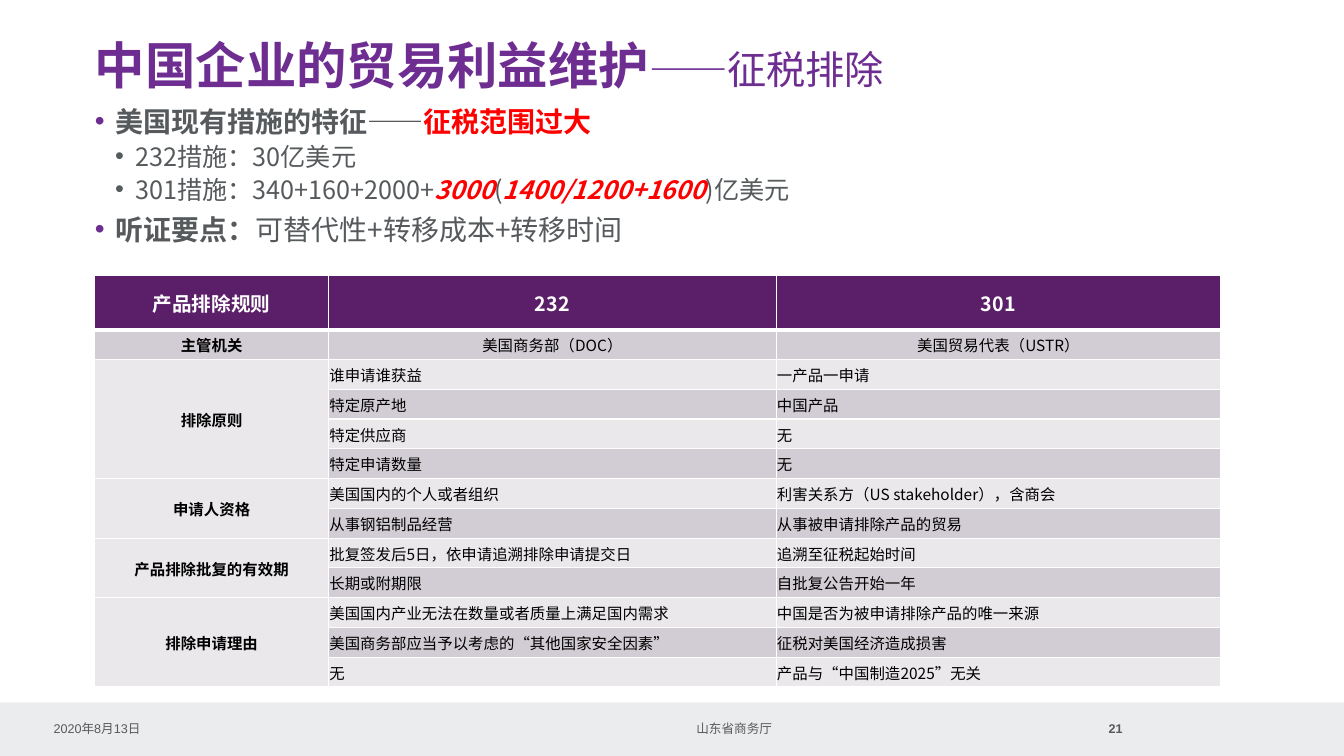
import pptx
import pptx.util
import pptx.dml.color
import pptx.enum.shapes
import pptx.enum.text
import pptx.oxml.ns
from lxml import etree

Cm, Pt = pptx.util.Cm, pptx.util.Pt
RGBColor = pptx.dml.color.RGBColor
PP_ALIGN = pptx.enum.text.PP_ALIGN
MSO_ANCHOR = pptx.enum.text.MSO_ANCHOR
qn = pptx.oxml.ns.qn

PURPLE = RGBColor(0x6E, 0x2D, 0x91)
HEADER_PURPLE = RGBColor(0x5B, 0x1F, 0x69)
GREY = RGBColor(0x56, 0x5A, 0x5C)
FOOTER_GREY = RGBColor(0xEB, 0xEC, 0xED)
BAND_DARK = RGBColor(0xD2, 0xCD, 0xD4)
BAND_LIGHT = RGBColor(0xEA, 0xE8, 0xEB)
RED = RGBColor(0xFF, 0x00, 0x00)
WHITE = RGBColor(0xFF, 0xFF, 0xFF)
BLACK = RGBColor(0x00, 0x00, 0x00)

CJK = "Noto Sans CJK SC"
LEFT = 2.39

# Wording: each point is (level, [(text, format), ...])
HOT = dict(color=RED, bold=True, italic=True)
POINTS = [
    (0, [("美国现有措施的特征——", dict(bold=True)),
         ("征税范围过大", dict(bold=True, color=RED))]),
    (1, [("232措施：30亿美元", {})]),
    (1, [("301措施：340+160+2000+", {}), ("3000", HOT), ("(", {}),
         ("1400/1200+1600", HOT), (")亿美元", {})]),
    (0, [("听证要点：", dict(bold=True)),
         ("可替代性+转移成本+转移时间", {})]),
]
HEADINGS = ["产品排除规则", "232", "301"]
RULES = [
    ("主管机关", [("美国商务部（DOC）", "美国贸易代表（USTR）")]),
    ("排除原则", [("谁申请谁获益", "一产品一申请"),
              ("特定原产地", "中国产品"),
              ("特定供应商", "无"),
              ("特定申请数量", "无")]),
    ("申请人资格", [("美国国内的个人或者组织", "利害关系方（US stakeholder），含商会"),
               ("从事钢铝制品经营", "从事被申请排除产品的贸易")]),
    ("产品排除批复的有效期", [("批复签发后5日，依申请追溯排除申请提交日", "追溯至征税起始时间"),
                    ("长期或附期限", "自批复公告开始一年")]),
    ("排除申请理由", [("美国国内产业无法在数量或者质量上满足国内需求", "中国是否为被申请排除产品的唯一来源"),
                ("美国商务部应当予以考虑的“其他国家安全因素”", "征税对美国经济造成损害"),
                ("无", "产品与“中国制造2025”无关")]),
]


def add_text(paragraph, text, size=18, color=GREY, bold=False, italic=False, font=CJK):
    run = paragraph.add_run()
    run.text = text
    run.font.size = Pt(size)
    run.font.bold = bold
    run.font.italic = italic
    run.font.color.rgb = color
    run.font.name = font
    east_asian = etree.Element(qn("a:ea"), typeface=CJK)
    run.font._element.find(qn("a:latin")).addnext(east_asian)


class RulesSlide:
    def __init__(self, deck):
        self.slide = deck.slides.add_slide(deck.slide_layouts[5])
        self.shapes = self.slide.shapes

    def clear_frame(self, frame, anchor, wrap=True):
        frame.margin_left = frame.margin_right = 0
        frame.margin_top = frame.margin_bottom = 0
        frame.auto_size = pptx.enum.text.MSO_AUTO_SIZE.NONE
        frame.vertical_anchor = anchor
        frame.word_wrap = wrap
        return frame.paragraphs[0]

    def title(self, main, detail):
        heading = self.shapes.title
        heading.left, heading.top = Cm(LEFT), Cm(1.02)
        heading.width, heading.height = Cm(26.52), Cm(1.47)
        line = self.clear_frame(heading.text_frame, MSO_ANCHOR.TOP)
        line.alignment = PP_ALIGN.LEFT
        line.line_spacing = 0.9
        add_text(line, main, size=36, color=PURPLE, bold=True)
        add_text(line, detail, size=28, color=PURPLE)

    def band(self, left, top, width, height, color):
        strip = self.shapes.add_shape(pptx.enum.shapes.MSO_SHAPE.RECTANGLE,
                                      Cm(left), Cm(top), Cm(width), Cm(height))
        strip.shadow.inherit = False
        strip.fill.solid()
        strip.fill.fore_color.rgb = color
        strip.line.fill.background()

    def footer(self, text, left, width, align=PP_ALIGN.LEFT, wrap=True, bold=False):
        box = self.shapes.add_textbox(Cm(left), Cm(18.16), Cm(width), Cm(0.41))
        line = self.clear_frame(box.text_frame, MSO_ANCHOR.MIDDLE, wrap)
        line.alignment = align
        add_text(line, text, size=9, bold=bold, font="Arial")

    def bullet(self, paragraph, level):
        paragraph.level = level
        props = paragraph._p.get_or_add_pPr()
        props.set("marL", str(Cm(0.51 * (level + 1))))
        props.set("indent", str(-Cm(0.51)))
        bullet_color = etree.SubElement(props, qn("a:buClr"))
        etree.SubElement(bullet_color, qn("a:srgbClr"), val=str(GREY if level else PURPLE))
        etree.SubElement(props, qn("a:buFont"), typeface="Arial")
        etree.SubElement(props, qn("a:buChar"), char="•")

    def points(self, points):
        box = self.shapes.add_textbox(Cm(LEFT), Cm(2.78), Cm(25.58), Cm(4.06))
        line = self.clear_frame(box.text_frame, MSO_ANCHOR.TOP)
        for number, (level, pieces) in enumerate(points):
            if number:
                line = box.text_frame.add_paragraph()
            self.bullet(line, level)
            line.line_spacing = 0.82
            line.space_before = Pt((6 if level else 10) if number else 0)
            for text, style in pieces:
                add_text(line, text, size=18 if level else 20, **style)

    def cell(self, cell, fill, top=1, bottom=1):
        cell.margin_left = cell.margin_right = cell.margin_top = Cm(0.02)
        cell.margin_bottom = 0
        cell.vertical_anchor = MSO_ANCHOR.MIDDLE
        props = cell._tc.get_or_add_tcPr()
        for side, width in (("L", 1), ("R", 1), ("T", top), ("B", bottom)):
            border = etree.SubElement(props, qn(f"a:ln{side}"), w=str(Pt(width)))
            paint = etree.SubElement(border, qn("a:solidFill"))
            etree.SubElement(paint, qn("a:srgbClr"), val=str(WHITE))
        cell.fill.solid()
        cell.fill.fore_color.rgb = fill

    def cell_text(self, cell, text, centred=True, **style):
        line = cell.text_frame.paragraphs[0]
        line.alignment = PP_ALIGN.CENTER if centred else PP_ALIGN.LEFT
        add_text(line, text, **style)

    def rules_table(self, headings, rules):
        row_count = 1 + sum(len(pairs) for _, pairs in rules)
        table = self.shapes.add_table(row_count, 3, Cm(LEFT), Cm(6.94),
                                      Cm(28.37), Cm(10.37)).table
        for column, width in zip(table.columns, (5.89, 11.28, 11.2)):
            column.width = Cm(width)
        for number, row in enumerate(table.rows):
            row.height = Cm(0.75 if number else 1.37)
            fill = (BAND_LIGHT, BAND_DARK)[number % 2] if number else HEADER_PURPLE
            for cell in row.cells:
                self.cell(cell, fill, top=3 if number == 1 else 1,
                          bottom=1 if number else 3)

        # Header row
        for column, text in enumerate(headings):
            self.cell_text(table.cell(0, column), text, size=14, color=WHITE, bold=True)

        # Groups of rules, with the topic merged down its rows
        first = 1
        for topic, pairs in rules:
            last = first + len(pairs) - 1
            if last > first:
                table.cell(first, 0).merge(table.cell(last, 0))
            self.cell_text(table.cell(first, 0), topic, size=11, color=BLACK, bold=True)
            for row, pair in enumerate(pairs, first):
                for column, text in enumerate(pair, 1):
                    self.cell_text(table.cell(row, column), text, centred=row == 1,
                                   size=11, color=BLACK)
            first = last + 1


def main():
    deck = pptx.Presentation()
    deck.slide_width, deck.slide_height = Cm(33.87), Cm(19.05)
    page = RulesSlide(deck)

    # Footer
    page.band(0, 17.7, 33.87, 1.35, FOOTER_GREY)
    page.footer("2020年8月13日", 1.35, 8)
    page.footer("山东省商务厅", 17.55, 8)
    page.footer("21", 27.76, 0.53, align=PP_ALIGN.RIGHT, wrap=False, bold=True)

    # Title, points and table
    page.title("中国企业的贸易利益维护", "——征税排除")
    page.points(POINTS)
    page.rules_table(HEADINGS, RULES)
    deck.save("out.pptx")


if __name__ == "__main__":
    main()
